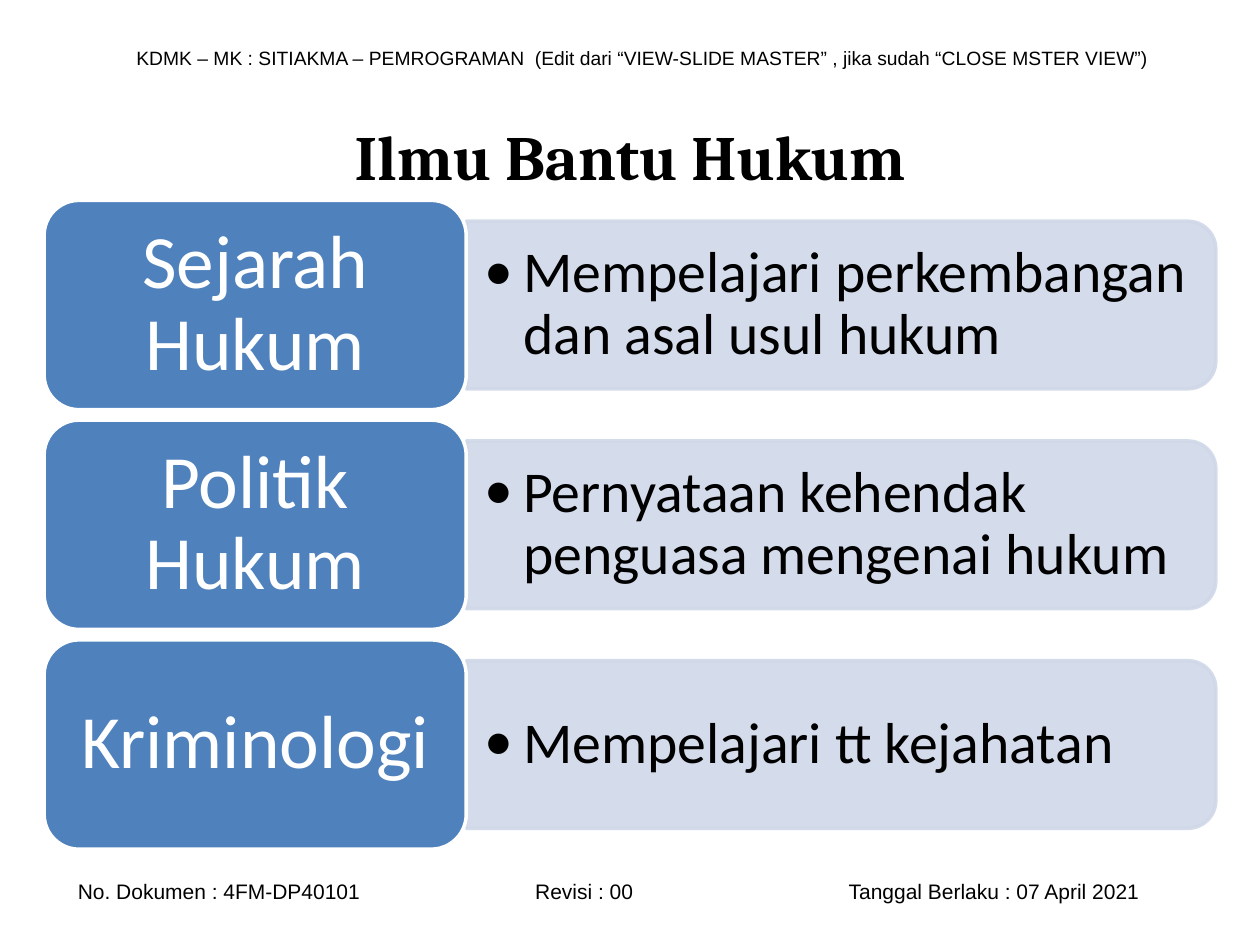
from pptx import Presentation
from pptx.dml.color import RGBColor
from pptx.enum.shapes import MSO_SHAPE as Shape
from pptx.enum.text import MSO_ANCHOR as Anchor, PP_ALIGN as Align
from pptx.oxml.ns import qn
from pptx.util import Cm, Pt
from lxml.etree import SubElement

BLACK = RGBColor(0x00, 0x00, 0x00)
WHITE = RGBColor(0xFF, 0xFF, 0xFF)
BLUE = RGBColor(0x4F, 0x81, 0xBD)
PALE_BLUE = RGBColor(0xD0, 0xD8, 0xE8)

TOPICS = [
    ("Sejarah Hukum", "Mempelajari perkembangan dan asal usul hukum"),
    ("Politik Hukum", "Pernyataan kehendak penguasa mengenai hukum"),
    ("Kriminologi", "Mempelajari tt kejahatan"),
]
ROW_TOP, ROW_PITCH = 4.04, 4.43
CARD_LEFT, CARD_WIDTH, CARD_HEIGHT = 0.89, 8.51, 4.22
PANEL_LEFT, PANEL_WIDTH, PANEL_HEIGHT = 9.4, 15.11, 3.38
TEXT_WIDTH, TEXT_HEIGHT = 14.94, 3.05


def write(shape, text, font_name, size, color, align, margins=(0.25, 0.13)):
    """Fill a shape with one vertically centred paragraph and return it."""
    frame = shape.text_frame
    frame.word_wrap = True
    frame.vertical_anchor = Anchor.MIDDLE
    frame.margin_left = frame.margin_right = Cm(margins[0])
    frame.margin_top = frame.margin_bottom = Cm(margins[1])
    frame.text = text
    para = frame.paragraphs[0]
    para.alignment = align
    para.font.name = font_name
    para.font.size = Pt(size)
    para.font.color.rgb = color
    return para


def paint(shape, fill, line):
    shape.shadow.inherit = False
    shape.fill.solid()
    shape.fill.fore_color.rgb = fill
    shape.line.color.rgb = line
    shape.line.width = Pt(2)


deck = Presentation()
deck.slide_width, deck.slide_height = Cm(25.4), Cm(19.05)
page = deck.slides.add_slide(deck.slide_layouts[5])

# Document header and footer
header = page.shapes.add_textbox(Cm(2.5), Cm(0.79), Cm(21.21), Cm(0.74))
write(header, "KDMK – MK : SITIAKMA – PEMROGRAMAN  (Edit dari “VIEW-SLIDE MASTER” , "
      "jika sudah “CLOSE MSTER VIEW”)", "Arial", 11, BLACK, Align.LEFT)

footer = page.shapes.add_textbox(Cm(1.32), Cm(17.58), Cm(23.2), Cm(0.76))
footer_para = write(footer, "No. Dokumen : 4FM-DP40101\tRevisi : 00\tTanggal Berlaku : 07 April 2021",
                    "Arial", 12, BLACK, Align.LEFT)
tab_list = footer_para._p.get_or_add_pPr().makeelement(qn("a:tabLst"))
for position in (9.22, 15.54):
    SubElement(tab_list, qn("a:tab"), pos=str(Cm(position)), algn="l")
footer_para._p.pPr.insert(0, tab_list)

# Title
title = page.shapes.title
title.left, title.top, title.width, title.height = Cm(1.27), Cm(1.55), Cm(22.86), Cm(3.18)
write(title, "Ilmu Bantu Hukum", "Cambria", 36, BLACK, Align.CENTER).font.bold = True

# One row per topic: pale panel, its description, then the card on top
for row, (topic, description) in enumerate(TOPICS):
    top = ROW_TOP + row * ROW_PITCH
    middle = top + CARD_HEIGHT / 2

    # The panel is turned a quarter, so its width and height swap places
    panel = page.shapes.add_shape(
        Shape.ROUND_2_SAME_RECTANGLE,
        Cm(PANEL_LEFT + (PANEL_WIDTH - PANEL_HEIGHT) / 2), Cm(middle - PANEL_WIDTH / 2),
        Cm(PANEL_HEIGHT), Cm(PANEL_WIDTH))
    panel.rotation = 90
    paint(panel, PALE_BLUE, PALE_BLUE)
    for color in panel._element.spPr.iter(qn("a:srgbClr")):
        SubElement(color, qn("a:alpha"), val="90000")

    box = page.shapes.add_textbox(Cm(PANEL_LEFT), Cm(middle - TEXT_HEIGHT / 2),
                                  Cm(TEXT_WIDTH), Cm(TEXT_HEIGHT))
    para = write(box, description, "Calibri", 33, BLACK, Align.LEFT, (0.36, 0.18))
    para.line_spacing = 0.9
    props = para._p.pPr
    props.set("marL", str(Cm(0.79)))
    props.set("indent", str(-Cm(0.79)))
    bullet_font = props.makeelement(qn("a:buFont"), typeface="Calibri")
    props.find(qn("a:lnSpc")).addnext(bullet_font)
    bullet_font.addnext(props.makeelement(qn("a:buChar"), char="•"))

    # Narrow side margins keep the longest topic on one line
    card = page.shapes.add_shape(Shape.ROUNDED_RECTANGLE, Cm(CARD_LEFT), Cm(top),
                                 Cm(CARD_WIDTH), Cm(CARD_HEIGHT))
    paint(card, BLUE, WHITE)
    write(card, topic, "Calibri", 43, WHITE, Align.CENTER, (0.4, 0.23)).line_spacing = 0.9

deck.save("out.pptx")
